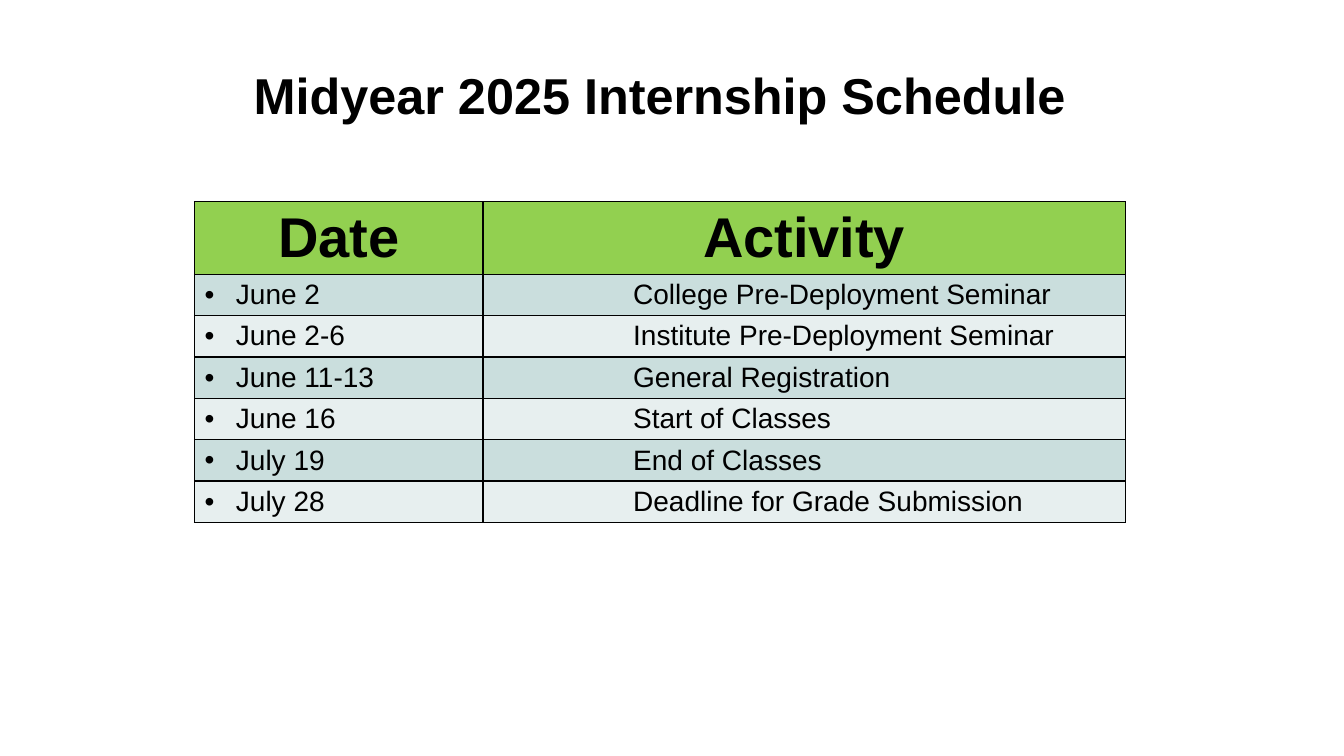
"""Build the internship schedule slide."""
from dataclasses import dataclass

import pptx
import pptx.dml.color
import pptx.enum.text
import pptx.oxml
import pptx.oxml.ns
import pptx.util
from lxml import etree

TITLE = "Midyear 2025 Internship Schedule"
HEADINGS = ("Date", "Activity")
SCHEDULE = [
    ("June 2", "College Pre-Deployment Seminar"),
    ("June 2-6", "Institute Pre-Deployment Seminar"),
    ("June 11-13", "General Registration"),
    ("June 16", "Start of Classes"),
    ("July 19", "End of Classes"),
    ("July 28", "Deadline for Grade Submission"),
]


@dataclass(frozen=True)
class Theme:
    font: str = "Arial"
    ink: str = "000000"
    header: str = "92D050"
    bands: tuple = ("CADEDD", "E7EFEF")
    title_size: int = 36
    header_size: int = 40
    body_size: int = 20
    border: int = 1


THEME = Theme()
SLIDE_SIZE = (13.33, 7.5)
TITLE_BOX = (0.67, 0.6, 11.75, 0.74)
TABLE_ORIGIN = (1.93, 2)
COLUMNS = (2.86, 6.37)
HEADER_HEIGHT, ROW_HEIGHT = 0.72, 0.41
BULLET_INDENT, ACTIVITY_INDENT = 0.31, 1.39
CENTER = pptx.enum.text.PP_ALIGN.CENTER
Inches = pptx.util.Inches


def rgb(value):
    return pptx.dml.color.RGBColor.from_string(value)


def add_span(para, text, size, bold=False):
    span = para.add_run()
    span.text = text
    span.font.name = THEME.font
    span.font.size = pptx.util.Pt(size)
    span.font.bold = bold
    span.font.color.rgb = rgb(THEME.ink)


def add_child(parent, tag, **attributes):
    child = etree.SubElement(parent, pptx.oxml.ns.qn(tag))
    for name, value in attributes.items():
        child.set(name, str(value))
    return child


def style_cell(cell, color):
    properties = cell._tc.get_or_add_tcPr()
    for side in ("a:lnL", "a:lnR", "a:lnT", "a:lnB"):
        line = add_child(properties, side, w=pptx.util.Pt(THEME.border))
        add_child(add_child(line, "a:solidFill"), "a:srgbClr", val=THEME.ink)
    cell.fill.solid()
    cell.fill.fore_color.rgb = rgb(color)


def indent(para, left, bullet=False):
    properties = para._p.get_or_add_pPr()
    properties.set("marL", str(Inches(left)))
    if bullet:
        properties.set("indent", str(-Inches(left)))
        add_child(add_child(properties, "a:buClr"), "a:srgbClr", val=THEME.ink)
        add_child(properties, "a:buFont", typeface=THEME.font)
        add_child(properties, "a:buChar", char="•")


def add_title(page):
    box = page.shapes.title
    box.left, box.top, box.width, box.height = map(Inches, TITLE_BOX)
    frame = box.text_frame
    frame.word_wrap = True
    frame.auto_size = pptx.enum.text.MSO_AUTO_SIZE.NONE
    frame.vertical_anchor = pptx.enum.text.MSO_ANCHOR.MIDDLE
    para = frame.paragraphs[0]
    para.alignment = CENTER
    para.line_spacing = 0.9
    add_span(para, TITLE, THEME.title_size, bold=True)


def add_schedule(page):
    heights = [HEADER_HEIGHT] + [ROW_HEIGHT] * len(SCHEDULE)
    size = (sum(COLUMNS), sum(heights))
    table = page.shapes.add_table(
        len(heights), len(COLUMNS), *map(Inches, TABLE_ORIGIN + size)).table
    for column, width in zip(table.columns, COLUMNS):
        column.width = Inches(width)
    for row, height in zip(table.rows, heights):
        row.height = Inches(height)
    for row_index, texts in enumerate([HEADINGS] + SCHEDULE):
        is_header = row_index == 0
        color = THEME.header if is_header else THEME.bands[(row_index - 1) % 2]
        for column_index, text in enumerate(texts):
            cell = table.cell(row_index, column_index)
            style_cell(cell, color)
            para = cell.text_frame.paragraphs[0]
            if is_header:
                para.alignment = CENTER
            elif column_index == 0:
                indent(para, BULLET_INDENT, bullet=True)
            else:
                indent(para, ACTIVITY_INDENT)
            size = THEME.header_size if is_header else THEME.body_size
            add_span(para, text, size, bold=is_header)


def main():
    deck = pptx.Presentation()
    deck.slide_width, deck.slide_height = map(Inches, SLIDE_SIZE)
    page = deck.slides.add_slide(deck.slide_layouts.get_by_name("Title Only"))
    add_title(page)
    add_schedule(page)
    deck.save("out.pptx")


if __name__ == "__main__":
    main()
